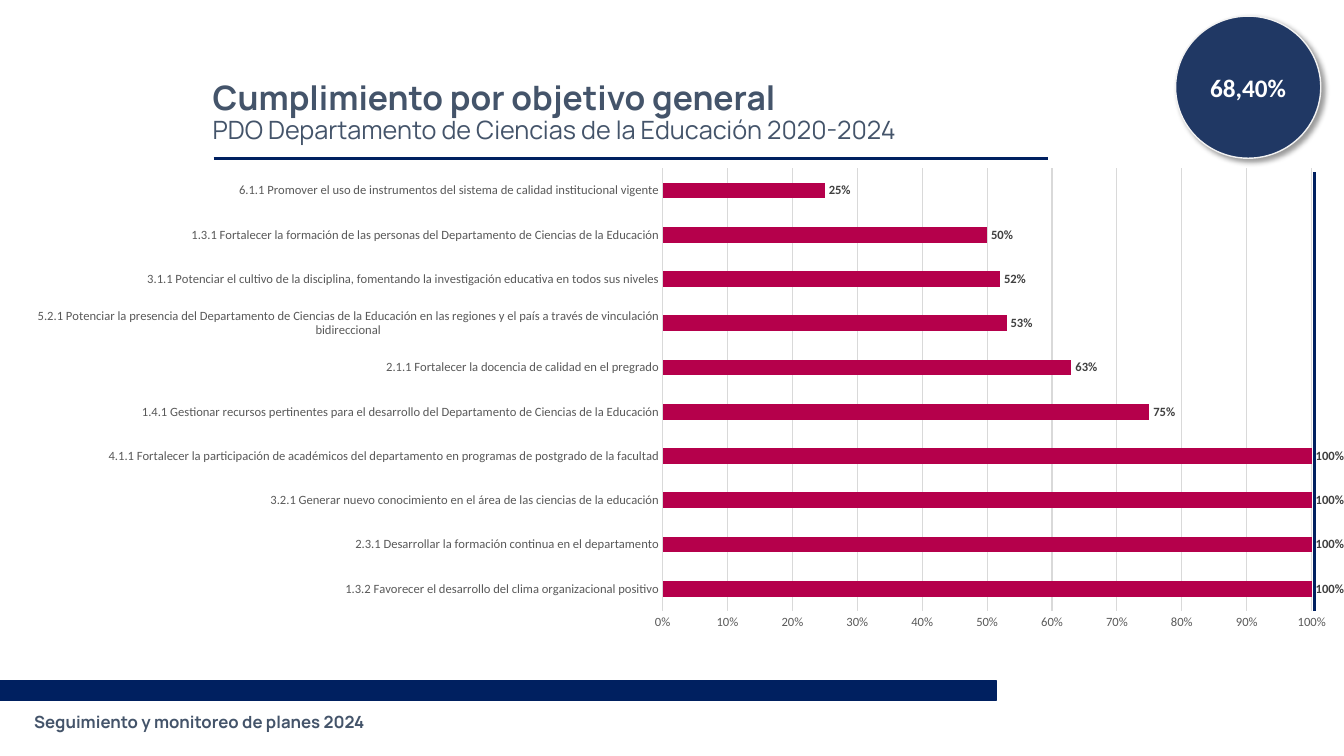
from lxml import etree
from pptx import Presentation
from pptx.chart.data import CategoryChartData
from pptx.dml.color import RGBColor
from pptx.enum.chart import XL_CHART_TYPE, XL_LABEL_POSITION, XL_TICK_MARK
from pptx.enum.shapes import MSO_CONNECTOR, MSO_SHAPE
from pptx.enum.text import MSO_ANCHOR, MSO_AUTO_SIZE, PP_ALIGN
from pptx.oxml import parse_xml
from pptx.oxml.ns import nsdecls, qn
from pptx.util import Inches, Pt

NAVY, SLATE, CRIMSON = "002060", "44546A", "B5004B"
AXIS_GRAY, GRID_GRAY = "595959", "D9D9D9"

# Objectives from the bottom of the chart to the top
OBJECTIVES = [
    ("1.3.2 Favorecer el desarrollo del clima organizacional positivo", 1),
    ("2.3.1 Desarrollar la formación continua en el departamento", 1),
    ("3.2.1 Generar nuevo conocimiento en el área de las ciencias de la educación", 1),
    ("4.1.1 Fortalecer la participación de académicos del departamento en "
     "programas de postgrado de la facultad", 1),
    ("1.4.1 Gestionar recursos pertinentes para el desarrollo del "
     "Departamento de Ciencias de la Educación", 0.75),
    ("2.1.1 Fortalecer la docencia de calidad en el pregrado", 0.63),
    ("5.2.1 Potenciar la presencia del Departamento de Ciencias de la Educación "
     "en las regiones y el país a través de vinculación bidireccional", 0.53),
    ("3.1.1 Potenciar el cultivo de la disciplina, fomentando la investigación "
     "educativa en todos sus niveles", 0.52),
    ("1.3.1 Fortalecer la formación de las personas del Departamento de "
     "Ciencias de la Educación", 0.5),
    ("6.1.1 Promover el uso de instrumentos del sistema de calidad "
     "institucional vigente", 0.25),
]


def rgb(hex_color):
    return RGBColor.from_string(hex_color)


def style_font(font, name, size, color, bold=False):
    font.name = name
    font.size = Pt(size)
    font.bold = bold
    font.color.rgb = rgb(color)


def add_block(slide, kind, left, top, width, height, fill, outline):
    block = slide.shapes.add_shape(
        kind, Inches(left), Inches(top), Inches(width), Inches(height))
    block.shadow.inherit = False
    block.fill.solid()
    block.fill.fore_color.rgb = rgb(fill)
    block.line.color.rgb = rgb(outline)
    block.line.width = Pt(1)
    return block


def write_label(block, text, name, size, color, alignment):
    frame = block.text_frame
    frame.text = text
    frame.vertical_anchor = MSO_ANCHOR.MIDDLE
    paragraph = frame.paragraphs[0]
    paragraph.alignment = alignment
    style_font(paragraph.runs[0].font, name, size, color, bold=True)


def add_rule(slide, x1, y1, x2, y2):
    rule = slide.shapes.add_connector(
        MSO_CONNECTOR.STRAIGHT, Inches(x1), Inches(y1), Inches(x2), Inches(y2))
    rule.line.color.rgb = rgb(NAVY)
    rule.line.width = Pt(2.25)
    etree.SubElement(rule._element.spPr, qn("a:effectLst"))


def write_title(slide):
    title = slide.shapes.title
    title.left, title.top = Inches(2.01), Inches(0.4)
    title.width, title.height = Inches(10.41), Inches(1.45)
    frame = title.text_frame
    frame.text = ("Cumplimiento por objetivo general\n"
                  "PDO Departamento de Ciencias de la Educación 2020-2024")
    frame.auto_size = MSO_AUTO_SIZE.NONE
    frame.word_wrap = True
    frame.vertical_anchor = MSO_ANCHOR.MIDDLE
    for paragraph, size, bold in zip(frame.paragraphs, (24, 18), (True, False)):
        paragraph.alignment = PP_ALIGN.LEFT
        paragraph.line_spacing = 0.9
        style_font(paragraph.runs[0].font, "Manrope", size, SLATE, bold)


def set_plot_area(chart, x, y, width, height):
    plot_area = chart._chartSpace.chart.plotArea
    for layout in plot_area.findall(qn("c:layout")):
        plot_area.remove(layout)
    plot_area.insert(0, parse_xml(
        f'<c:layout {nsdecls("c")}><c:manualLayout>'
        '<c:layoutTarget val="inner"/><c:xMode val="edge"/><c:yMode val="edge"/>'
        f'<c:x val="{x}"/><c:y val="{y}"/><c:w val="{width}"/><c:h val="{height}"/>'
        '</c:manualLayout></c:layout>'))


def add_objectives_chart(slide):
    data = CategoryChartData(number_format="0%")
    data.categories = [objective for objective, _ in OBJECTIVES]
    data.add_series("Series 1", [progress for _, progress in OBJECTIVES])
    chart = slide.shapes.add_chart(
        XL_CHART_TYPE.BAR_CLUSTERED, Inches(0), Inches(1.57),
        Inches(13.33), Inches(4.83), data).chart
    chart.has_legend = False
    chart.has_title = False
    style_font(chart.font, "Calibri", 10, "000000")
    set_plot_area(chart, 0.495, 0.021, 0.485, 0.909)

    # Bars and their percentages
    plot = chart.plots[0]
    plot.gap_width = 182
    plot.vary_by_categories = False
    bars = plot.series[0].format.fill
    bars.solid()
    bars.fore_color.rgb = rgb(CRIMSON)
    plot.has_data_labels = True
    percentages = plot.data_labels
    percentages.show_value = True
    percentages.number_format = "0%"
    percentages.number_format_is_linked = False
    percentages.position = XL_LABEL_POSITION.OUTSIDE_END
    style_font(percentages.font, "Calibri", 9, "404040", bold=True)

    # Axes
    for axis in (chart.category_axis, chart.value_axis):
        axis.major_tick_mark = XL_TICK_MARK.NONE
        axis.minor_tick_mark = XL_TICK_MARK.NONE
        style_font(axis.tick_labels.font, "Calibri", 9, AXIS_GRAY)
    scale = chart.value_axis
    scale.minimum_scale, scale.maximum_scale, scale.major_unit = 0, 1, 0.1
    scale.tick_labels.number_format = "0%"
    scale.tick_labels.number_format_is_linked = False
    scale.format.line.fill.background()
    scale.has_major_gridlines = True
    for line in (chart.category_axis.format.line, scale.major_gridlines.format.line):
        line.color.rgb = rgb(GRID_GRAY)
        line.width = Pt(0.75)


def add_total_badge(slide):
    badge = add_block(slide, MSO_SHAPE.OVAL, 11.66, 0.16, 1.44, 1.41,
                      "203864", "F2F2F2")
    write_label(badge, "68,40%", "Calibri", 18, "FFFFFF", PP_ALIGN.CENTER)
    effects = badge._element.spPr.find(qn("a:effectLst"))
    effects.append(parse_xml(
        f'<a:outerShdw {nsdecls("a")} blurRad="{Pt(4)}" dist="{Pt(3)}" '
        'dir="2700000" algn="tl" rotWithShape="0"><a:srgbClr val="000000">'
        '<a:alpha val="40000"/></a:srgbClr></a:outerShdw>'))


def add_footer(slide):
    add_block(slide, MSO_SHAPE.RECTANGLE, 0, 6.75, 9.88, 0.2, NAVY, NAVY)
    caption = add_block(slide, MSO_SHAPE.RECTANGLE, 0.24, 6.97, 4.07, 0.38,
                        "FFFFFF", "FFFFFF")
    caption.line.fill.background()
    write_label(caption, "Seguimiento y monitoreo de planes 2024",
                "Manrope", 12, SLATE, PP_ALIGN.LEFT)


def main():
    presentation = Presentation()
    presentation.slide_width = Inches(13.33)
    presentation.slide_height = Inches(7.5)
    slide = presentation.slides.add_slide(presentation.slide_layouts[5])

    add_footer(slide)
    write_title(slide)
    add_rule(slide, 2.12, 1.57, 10.39, 1.57)
    add_objectives_chart(slide)
    # Target line at 100%
    add_rule(slide, 13.04, 1.71, 13.04, 6.06)
    add_total_badge(slide)
    presentation.save("out.pptx")


if __name__ == "__main__":
    main()
